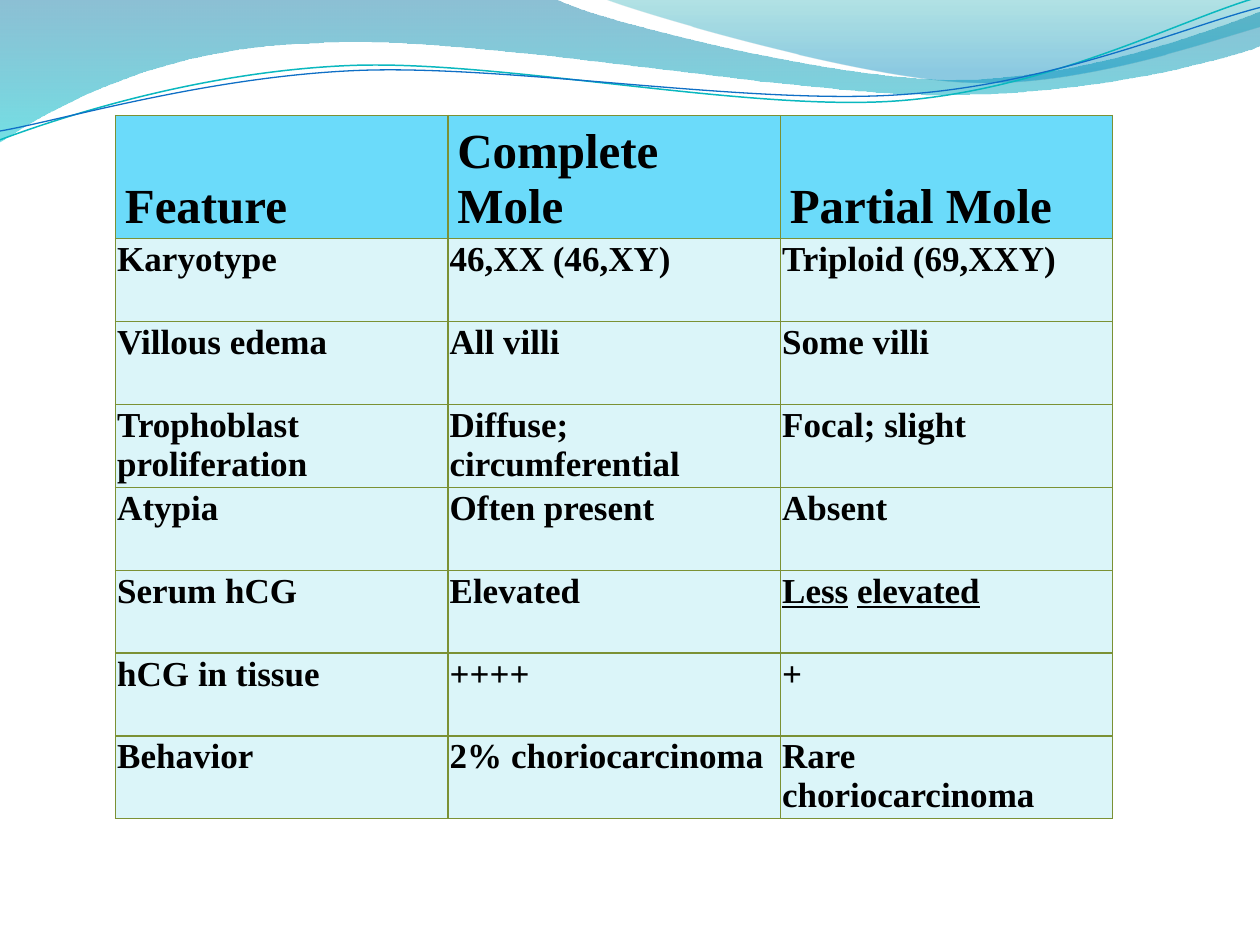
"""Build a slide comparing complete and partial moles under a wave banner."""
from math import cos, radians, sin

from lxml import etree
from pptx import Presentation
from pptx.dml.color import RGBColor
from pptx.enum.text import MSO_ANCHOR
from pptx.oxml.ns import qn
from pptx.util import Inches, Pt

TOP, BOTTOM = MSO_ANCHOR.TOP, MSO_ANCHOR.BOTTOM
BLACK = RGBColor(0x00, 0x00, 0x00)
HEADER_BLUE = RGBColor(0x6B, 0xDB, 0xFA)
PALE_BLUE = RGBColor(0xDB, 0xF5, 0xF9)
OLIVE = RGBColor(0x7B, 0x91, 0x35)
DEEP_BLUE = RGBColor(0x00, 0x74, 0xA1)
CYAN = RGBColor(0x00, 0xC6, 0xCF)
TEAL = RGBColor(0x00, 0xA1, 0xA9)
AZURE = RGBColor(0x00, 0x8B, 0xBF)
LINE_TEAL = RGBColor(0x0A, 0xB8, 0xBF)
LINE_BLUE = RGBColor(0x0F, 0x6F, 0xC6)

ROWS = [
    ("Feature", "Complete Mole", "Partial Mole"),
    ("Karyotype", "46,XX (46,XY)", "Triploid (69,XXY)"),
    ("Villous edema", "All villi", "Some villi"),
    ("Trophoblast proliferation", "Diffuse; circumferential", "Focal; slight"),
    ("Atypia", "Often present", "Absent"),
    ("Serum hCG", "Elevated", (("Less", True), (" ", False), ("elevated", True))),
    ("hCG in tissue", "++++", "+"),
    ("Behavior", "2% choriocarcinoma", "Rare choriocarcinoma"),
]
POINTS_PER_INCH = 72
TABLE_LEFT = TABLE_TOP = 66
COLUMN_WIDTH = 190
TABLE_HEIGHT = 5.7
HEADER = {"height": 70.2, "size": 28, "fill": HEADER_BLUE, "anchor": BOTTOM,
          "side": 5.4, "edge": 2.7}
BODY = {"height": 47.4, "size": 20, "fill": PALE_BLUE, "anchor": TOP,
        "side": 1, "edge": 1}

BANDS = [
    {"points": [(0, 0), (4.4, -0.01),
                (4.76, 0.17, 6.64, 0.63, 7.58, 0.63),
                (8.53, 0.63, 9.58, 0.26, 10, 0.09), (10.01, 0.36),
                (9.83, 0.44, 8.7, 0.76, 7.46, 0.75),
                (6.22, 0.75, 3.82, 0.28, 2.57, 0.34),
                (1.29, 0.36, 0.46, 0.83, -0.01, 1.13)],
     "stops": [(0, DEEP_BLUE, 45), (1, CYAN, 55)]},
    {"points": [(4.79, -0.01),
                (5.09, 0.11, 6.82, 0.62, 7.69, 0.65),
                (8.56, 0.69, 9.61, 0.32, 10, 0.21), (10, 0)],
     "stops": [(0, TEAL, 30), (0.8, AZURE, 45)]},
]
WAVE_TILT = -2.7
WAVES = [
    {"points": [(0, 1.11),
                (0.48, 0.93, 1.58, 0.57, 2.77, 0.52),
                (3.95, 0.47, 5.93, 0.89, 7.13, 0.8),
                (8.33, 0.71, 9.38, 0.15, 9.98, -0.02)],
     "center": (4.99, 0.58), "color": LINE_TEAL, "width": 0.85},
    {"points": [(0, 1.04),
                (0.47, 0.96, 1.64, 0.61, 2.83, 0.56),
                (4.03, 0.51, 5.97, 0.84, 7.17, 0.75),
                (8.36, 0.67, 9.41, 0.21, 10, 0.06)],
     "center": (5, 0.59), "color": LINE_BLUE, "width": 0.75},
]


def from_points(value):
    """Convert a length in points."""
    return Inches(value / POINTS_PER_INCH)


def turn(point, center, degrees):
    """Rotate a point clockwise about a center."""
    angle = radians(degrees)
    x, y = point[0] - center[0], point[1] - center[1]
    return (center[0] + x * cos(angle) - y * sin(angle),
            center[1] + x * sin(angle) + y * cos(angle))


def add_outline(slide, segments, close, center=(0, 0), tilt=0):
    """Add a freeform whose six-number segments are cubic curves."""
    vertices = [turn(segment[index:index + 2], center, -tilt)
                for segment in segments for index in range(0, len(segment), 2)]
    start, *others = [(Inches(x), Inches(y)) for x, y in vertices]
    builder = slide.shapes.build_freeform(*start)
    builder.add_line_segments(others, close=close)
    shape = builder.convert_to_shape()
    shape.shadow.inherit = False
    shape.rotation = tilt
    lines = iter(list(shape.element.iter(qn("a:lnTo"))))
    for segment in segments[1:]:
        line = next(lines)
        if len(segment) == 6:
            line.tag = qn("a:cubicBezTo")
            for control in (next(lines), next(lines)):
                line.append(control[0])
                control.getparent().remove(control)
    return shape


def add_band(slide, band):
    """Add a translucent gradient band."""
    shape = add_outline(slide, band["points"], True)
    shape.line.fill.background()
    shape.fill.gradient()
    shape.fill.gradient_angle = 270
    for stop, (position, color, opacity) in zip(shape.fill.gradient_stops, band["stops"]):
        stop.position = position
        stop.color.rgb = color
    color_elements = shape.element.spPr.iter(qn("a:srgbClr"))
    for element, (position, color, opacity) in zip(color_elements, band["stops"]):
        etree.SubElement(element, qn("a:alpha"), val=str(opacity * 1000))


def add_wave(slide, wave):
    """Add a thin wavy line."""
    shape = add_outline(slide, wave["points"], False, wave["center"], WAVE_TILT)
    shape.fill.background()
    shape.line.color.rgb = wave["color"]
    shape.line.width = Pt(wave["width"])


def add_borders(cell):
    """Draw all four borders of a table cell."""
    properties = cell._tc.get_or_add_tcPr()
    for side in ("lnL", "lnR", "lnT", "lnB"):
        line = etree.SubElement(properties, qn(f"a:{side}"), w=str(Pt(0.75)))
        fill = etree.SubElement(line, qn("a:solidFill"))
        etree.SubElement(fill, qn("a:srgbClr"), val=str(OLIVE))


def fill_cell(cell, content, style):
    """Write and format one table cell."""
    add_borders(cell)
    cell.fill.solid()
    cell.fill.fore_color.rgb = style["fill"]
    cell.vertical_anchor = style["anchor"]
    cell.margin_left = cell.margin_right = from_points(style["side"])
    cell.margin_top = cell.margin_bottom = from_points(style["edge"])
    runs = ((content, False),) if isinstance(content, str) else content
    font_values = {"name": "Times New Roman", "size": Pt(style["size"]), "bold": True}
    for text, underline in runs:
        run = cell.text_frame.paragraphs[0].add_run()
        run.text = text
        run.font.color.rgb = BLACK
        for name, value in {**font_values, "underline": underline}.items():
            setattr(run.font, name, value)


def add_comparison(slide):
    """Add the comparison table."""
    styles = [HEADER] + [BODY] * (len(ROWS) - 1)
    column_count = len(ROWS[0])
    frame = slide.shapes.add_table(
        len(ROWS), column_count, from_points(TABLE_LEFT), from_points(TABLE_TOP),
        from_points(COLUMN_WIDTH * column_count), Inches(TABLE_HEIGHT))
    for row, contents, style in zip(frame.table.rows, ROWS, styles):
        row.height = from_points(style["height"])
        for cell, content in zip(row.cells, contents):
            fill_cell(cell, content, style)
    frame.height = Inches(TABLE_HEIGHT)


def main():
    """Build and save the presentation."""
    presentation = Presentation()
    presentation.slide_width, presentation.slide_height = Inches(10), Inches(7.5)
    slide = presentation.slides.add_slide(presentation.slide_layouts[6])
    for band in BANDS:
        add_band(slide, band)
    for wave in WAVES:
        add_wave(slide, wave)
    add_comparison(slide)
    presentation.save("out.pptx")


if __name__ == "__main__":
    main()
